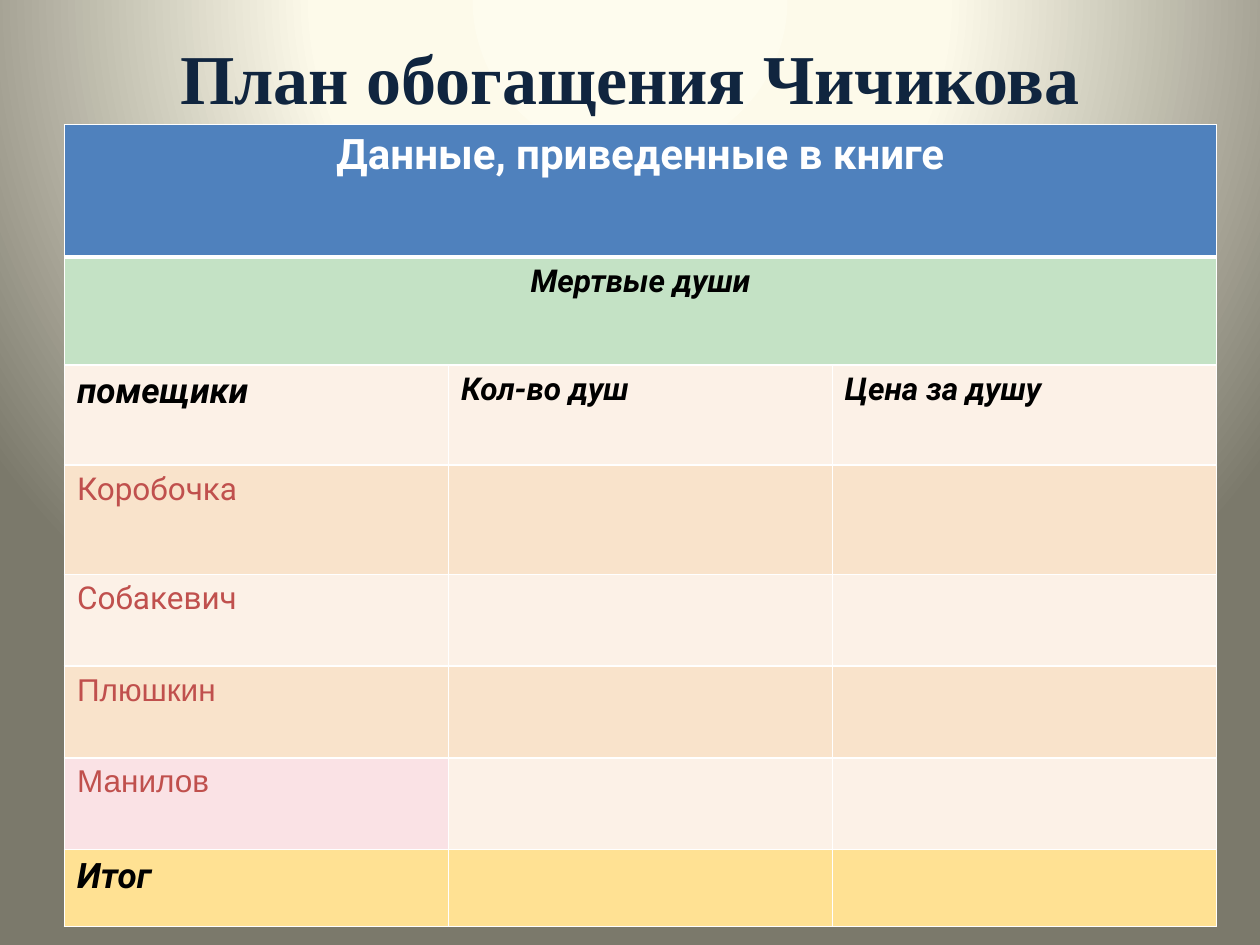
"""Build a slide with a table of the dead souls bought by Chichikov."""
from lxml.etree import SubElement
from pptx import Presentation
from pptx.dml.color import RGBColor
from pptx.enum.text import MSO_AUTO_SIZE, PP_ALIGN
from pptx.oxml import parse_xml
from pptx.oxml.ns import nsdecls, qn
from pptx.util import Cm, Pt


def color(value):
    return RGBColor.from_string(value)


def add_text(para, text, size, font, ink, bold, italic):
    span = para.add_run()
    span.text = text
    span.font.size = Pt(size)
    span.font.name = font
    span.font.color.rgb = color(ink)
    span.font.bold = bold
    span.font.italic = italic


deck = Presentation()
deck.slide_width, deck.slide_height = Cm(25.4), Cm(19.05)
page = deck.slides.add_slide(deck.slide_layouts[6])

backdrop = page.background.fill
backdrop.gradient()
gradient = page.background._cSld.find(".//" + qn("a:gradFill"))
stops = "".join(
    f'<a:gs pos="{place * 1000}"><a:srgbClr val="{value}"/></a:gs>'
    for place, value in [(0, "FEFCEE"), (40, "FDFAEA"), (100, "7B796B")]
)
gradient.getparent().replace(gradient, parse_xml(
    f'<a:gradFill {nsdecls("a")} rotWithShape="1"><a:gsLst>{stops}</a:gsLst>'
    '<a:path path="circle"><a:fillToRect l="50000" t="-80000" r="50000" b="180000"/>'
    '</a:path></a:gradFill>'
))

BLACK, WHITE, RED = "000000", "FFFFFF", "C0504D"
CREAM, PEACH, GOLD = "FCF1E7", "F9E3CB", "FFE193"
rows = [
    (2.67, ["Данные, приведенные в книге"], [24], "Roboto", WHITE, True, False, ["4F81BD"] * 3),
    (2.18, ["Мертвые души"], [18], "Roboto", BLACK, True, True, ["C4E2C5"] * 3),
    (2.01, ["помещики", "Кол-во душ", "Цена за душу"], [20, 18, 18], "Roboto", BLACK, True, True, [CREAM] * 3),
    (2.21, ["Коробочка"], [18], "Roboto", RED, False, False, [PEACH] * 3),
    (1.85, ["Собакевич"], [18], "Roboto", RED, False, False, [CREAM] * 3),
    (1.85, ["Плюшкин"], [18], "Arial", RED, False, False, [PEACH] * 3),
    (1.85, ["Манилов"], [18], "Arial", RED, False, False, ["FAE2E5", CREAM, CREAM]),
    (1.55, ["Итог"], [20], "Roboto", BLACK, True, True, [GOLD] * 3),
]
frame = page.shapes.add_table(len(rows), 3, Cm(1.3), Cm(2.51), Cm(23.22), Cm(16.2))
table = frame.table
for column in table.columns:
    column.width = Cm(7.74)

for index, (height, texts, sizes, font, ink, bold, italic, fills) in enumerate(rows):
    table.rows[index].height = Cm(height)
    for position, fill in enumerate(fills):
        cell = table.cell(index, position)
        properties = cell._tc.get_or_add_tcPr()
        for side in ("L", "R", "T", "B"):
            heavy = (index, side) in [(0, "B"), (1, "T")]
            line = SubElement(properties, qn(f"a:ln{side}"), w=str(Pt(3 if heavy else 1)))
            SubElement(SubElement(line, qn("a:solidFill")), qn("a:srgbClr"), val=WHITE)
        cell.fill.solid()
        cell.fill.fore_color.rgb = color(fill)
    for position, (text, size) in enumerate(zip(texts, sizes)):
        para = table.cell(index, position).text_frame.paragraphs[0]
        add_text(para, text, size, font, ink, bold, italic)
    if index < 2:
        table.cell(index, 0).merge(table.cell(index, 2))
        table.cell(index, 0).text_frame.paragraphs[0].alignment = PP_ALIGN.CENTER

box = page.shapes.add_textbox(Cm(0), Cm(0.58), Cm(25.4), Cm(1.96))
box.text_frame.word_wrap = True
box.text_frame.auto_size = MSO_AUTO_SIZE.SHAPE_TO_FIT_TEXT
title = box.text_frame.paragraphs[0]
title.alignment = PP_ALIGN.CENTER
add_text(title, "План обогащения Чичикова", 40, "Times New Roman", "10253F", True, False)

deck.save("out.pptx")
